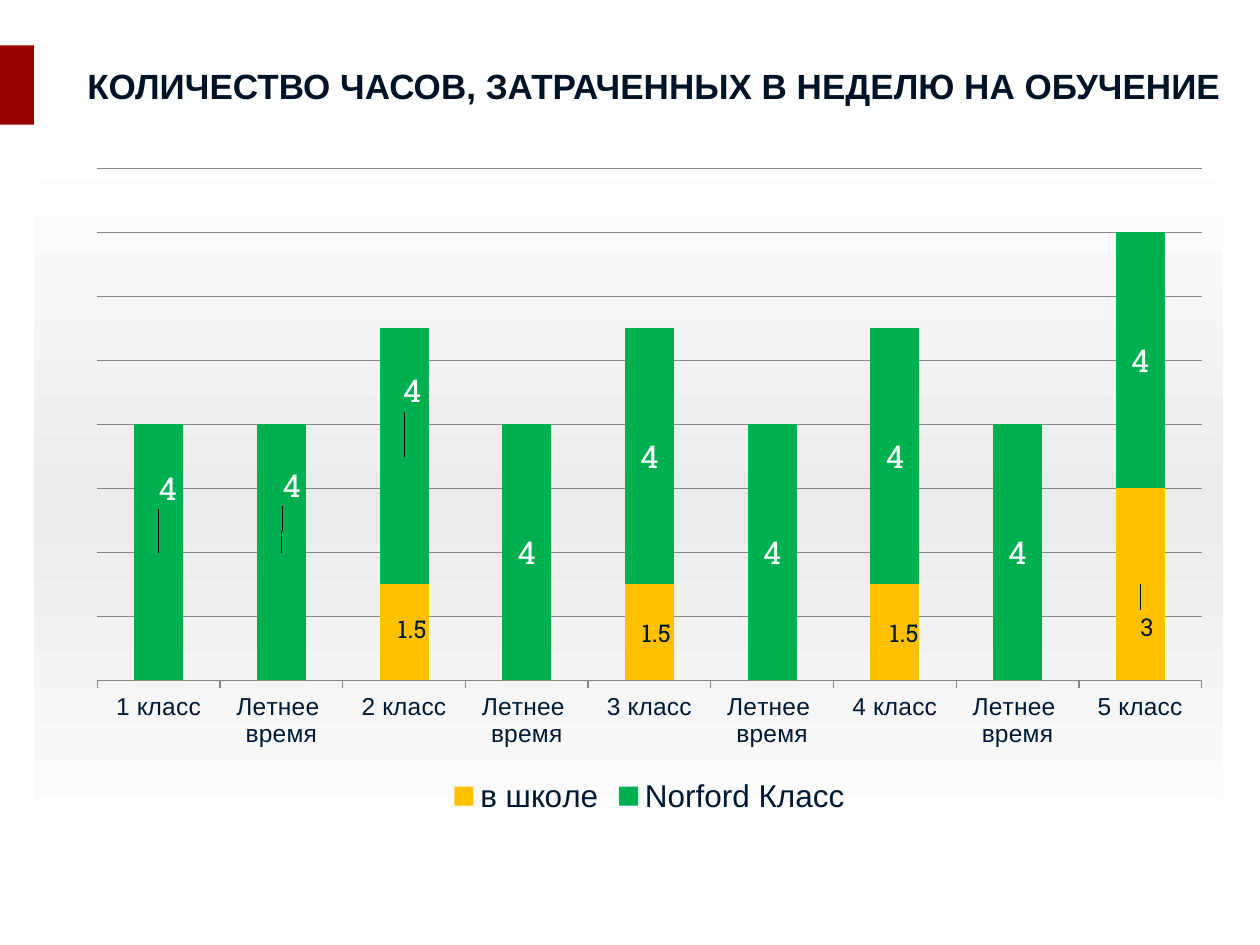
import pptx
import pptx.util
import pptx.oxml
import pptx.oxml.ns
import pptx.dml.color
import pptx.chart.data
import pptx.enum.chart
import pptx.enum.shapes
import pptx.enum.text
from lxml import etree

Inches = pptx.util.Inches
Pt = pptx.util.Pt
qn = pptx.oxml.ns.qn


def color(hex_value):
    return pptx.dml.color.RGBColor.from_string(hex_value)


def add_node(parent, tag, **attributes):
    return etree.SubElement(parent, qn(tag), attributes)


deck = pptx.Presentation()
deck.slide_width = Inches(10)
deck.slide_height = Inches(7.5)
page = deck.slides.add_slide(deck.slide_layouts[6])
header_top, header_height = Inches(0.36), Inches(0.63)

panel = page.shapes.add_shape(
    pptx.enum.shapes.MSO_SHAPE.ROUNDED_RECTANGLE,
    Inches(0.27), Inches(1.15), Inches(9.44), Inches(5.75))
panel.adjustments[0] = 0.03
panel.shadow.inherit = False
panel.line.fill.background()
panel.fill.gradient()
panel.fill.gradient_angle = 270
stops = panel.fill._fill._gradFill.find(qn("a:gsLst"))
for stop in list(stops):
    stops.remove(stop)
for position, shade in ((0, "FFFFFF"), (50, "EBEBEB"), (100, "FFFFFF")):
    stop = add_node(stops, "a:gs", pos=str(position * 1000))
    add_node(stop, "a:srgbClr", val=shade)

accent = page.shapes.add_shape(
    pptx.enum.shapes.MSO_SHAPE.RECTANGLE, 0, header_top, Inches(0.27), header_height)
accent.shadow.inherit = False
accent.fill.solid()
accent.fill.fore_color.rgb = color("990000")
accent.line.fill.background()

title = page.shapes.add_textbox(Inches(0.5), header_top, Inches(9.38), header_height)
title.text_frame.word_wrap = True
title.text_frame.vertical_anchor = pptx.enum.text.MSO_ANCHOR.MIDDLE
para = title.text_frame.paragraphs[0]
para.text = "КОЛИЧЕСТВО ЧАСОВ, ЗАТРАЧЕННЫХ В НЕДЕЛЮ НА ОБУЧЕНИЕ"
para.alignment = pptx.enum.text.PP_ALIGN.CENTER
para.font.name = "Arial"
para.font.size = Pt(20)
para.font.bold = True
para.font.color.rgb = color("001326")

summer = "Летнее \nвремя"
data = pptx.chart.data.CategoryChartData()
data.categories = ["1 класс", summer, "2 класс", summer, "3 класс",
                   summer, "4 класс", summer, "5 класс"]
data.add_series("в школе", [0, 0, 1.5, 0, 1.5, 0, 1.5, 0, 3])
data.add_series("Norford Класс", [4] * 9)
chart = page.shapes.add_chart(
    pptx.enum.chart.XL_CHART_TYPE.COLUMN_STACKED,
    Inches(0.59), Inches(1.23), Inches(9.13), Inches(5.28), data).chart
chart.has_title = False
chart.font.name = "Arial"
chart.font.size = Pt(18)
chart.font.color.rgb = color("001932")
chart.has_legend = True
chart.legend.position = pptx.enum.chart.XL_LEGEND_POSITION.BOTTOM
chart.legend.include_in_layout = False

category_axis = chart.category_axis
category_axis.tick_labels.font.size = Pt(14)
category_axis.major_tick_mark = pptx.enum.chart.XL_TICK_MARK.OUTSIDE
value_axis = chart.value_axis
value_axis.minimum_scale = 0
value_axis.maximum_scale = 8
value_axis.major_unit = 1
value_axis.visible = False
value_axis.has_major_gridlines = True
for line in (category_axis.format.line, value_axis.major_gridlines.format.line):
    line.color.rgb = color("868686")
    line.width = Pt(0.75)

plot_area = chart._chartSpace.find(".//" + qn("c:plotArea"))
layout = plot_area.find(qn("c:layout"))
if layout is None:
    layout = etree.Element(qn("c:layout"))
    plot_area.insert(0, layout)
manual = add_node(layout, "c:manualLayout")
for tag, value in (("layoutTarget", "inner"), ("xMode", "edge"), ("yMode", "edge"),
                   ("x", "0.02"), ("y", "0.02"), ("w", "0.96"), ("h", "0.77")):
    add_node(manual, "c:" + tag, val=value)

plot = chart.plots[0]
plot.gap_width = 150
plot.overlap = 100
plot.vary_by_categories = False
series_styles = [
    ("FFC000", "001932", 14, {2: (0.007, -0.005), 4: (0.006, 0), 6: (0.008, 0), 8: (0.006, 0.063)}),
    ("00B050", "FFFFFF", 18, {0: (0.008, -0.096), 1: (0.009, -0.1), 2: (0.007, -0.098)}),
]
for series, (fill, ink, size, offsets) in zip(plot.series, series_styles):
    series.format.fill.solid()
    series.format.fill.fore_color.rgb = color(fill)
    labels = series.data_labels
    labels.show_value = True
    hidden = [index for index, value in enumerate(series.values) if value == 0]
    point_labels = {index: series.points[index].data_label for index in [*offsets, *hidden]}
    for font in [labels.font, *(label.font for label in point_labels.values())]:
        font.name = "Roboto Slab"
        font.size = Pt(size)
        font.color.rgb = color(ink)
    for node in labels._element.findall(qn("c:dLbl")):
        index = int(node.find(qn("c:idx")).get("val"))
        if index in hidden:
            for child in list(node)[1:]:
                node.remove(child)
            add_node(node, "c:delete", val="1")
        else:
            layout = etree.Element(qn("c:layout"))
            node.insert(1, layout)
            manual = add_node(layout, "c:manualLayout")
            for tag, offset in zip(("c:x", "c:y"), offsets[index]):
                add_node(manual, tag, val=str(offset))

deck.save("out.pptx")
